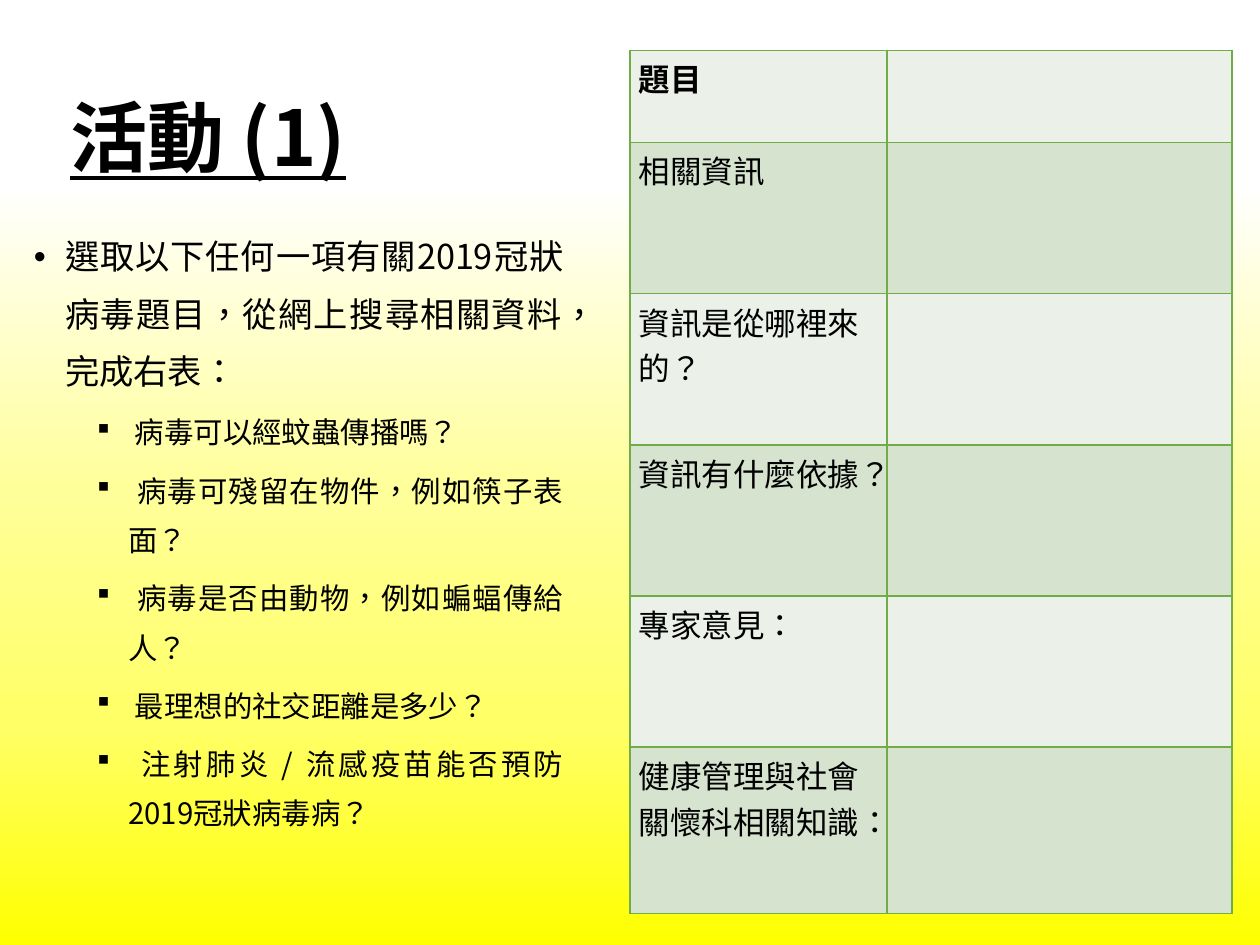
from lxml import etree
from pptx import Presentation
from pptx.enum import text
from pptx.oxml import parse_xml
from pptx.oxml.ns import nsdecls, qn
from pptx.util import Inches, Pt

FONT = "Noto Sans CJK SC"
COLORS = {"text": "000000", "border": "70AD47", "light": "EBF1E9", "dark": "D5E3CF"}
BACKGROUND = [(19, "FFFFFF"), (52, "FFFF99"), (77, "FFFF66"), (100, "FFFF00")]

INTRO = "選取以下任何一項有關2019冠狀病毒題目，從網上搜尋相關資料，完成右表："
TOPICS = [
    "病毒可以經蚊蟲傳播嗎？",
    "病毒可殘留在物件，例如筷子表面？",
    "病毒是否由動物，例如蝙蝠傳給人？",
    "最理想的社交距離是多少？",
    "注射肺炎 / 流感疫苗能否預防2019冠狀病毒病？",
]
ROWS = [
    ("題目", 0.73),
    ("相關資訊", 1.2),
    ("資訊是從哪裡來的？", 1.2),
    ("資訊有什麼依據？", 1.2),
    ("專家意見：", 1.2),
    ("健康管理與社會關懷科相關知識：", 1.32),
]
COLUMNS = [2.04, 2.74]


def solid_fill(color):
    return f'<a:solidFill {nsdecls("a")}><a:srgbClr val="{color}"/></a:solidFill>'


def set_background(s):
    stops = "".join(f'<a:gs pos="{pos * 1000}"><a:srgbClr val="{color}"/></a:gs>'
                    for pos, color in BACKGROUND)
    fill = s.background.fill
    fill.solid()
    bg_pr = s.element.find(".//" + qn("p:bgPr"))
    gradient = parse_xml(f'<a:gradFill {nsdecls("a")} rotWithShape="1"><a:gsLst>{stops}'
                         '</a:gsLst><a:lin ang="5400000" scaled="0"/></a:gradFill>')
    bg_pr.replace(bg_pr.find(qn("a:solidFill")), gradient)


def add_run(p, wording, size, bold=False, underline=False):
    r = p.add_run()
    r.text = wording
    r.font.size = Pt(size)
    r.font.bold = bold
    r.font.underline = underline
    r.font.name = FONT
    r_pr = r.font._element
    # Traditional Chinese centres its punctuation
    r_pr.set("lang", "zh-TW")
    r_pr.insert(0, parse_xml(solid_fill(COLORS["text"])))
    etree.SubElement(r_pr, qn("a:ea"), typeface=FONT)


def add_text_box(s, left, top, width, height, anchor):
    tf = s.shapes.add_textbox(Inches(left), Inches(top), Inches(width), Inches(height)).text_frame
    tf.word_wrap = True
    tf.vertical_anchor = anchor
    return tf


def add_title(s, left, top, width, height):
    tf = add_text_box(s, left, top, width, height, text.MSO_ANCHOR.MIDDLE)
    p = tf.paragraphs[0]
    p.line_spacing = 0.9
    add_run(p, "活動 (1)", 44, bold=True, underline=True)


def format_bullet(p, char, font, indent, before):
    p.alignment = text.PP_ALIGN.JUSTIFY
    p.line_spacing = 1.4
    p.space_before = Pt(before)
    p_pr = p._p.get_or_add_pPr()
    p_pr.set("marL", str(Inches(indent)))
    p_pr.set("indent", str(Inches(-0.25)))
    etree.SubElement(p_pr, qn("a:buFont"), typeface=font)
    etree.SubElement(p_pr, qn("a:buChar"), char=char)


def add_instructions(s, left, top, width, height):
    tf = add_text_box(s, left, top, width, height, text.MSO_ANCHOR.TOP)
    p = tf.paragraphs[0]
    format_bullet(p, "•", "Arial", 0.25, 10)
    add_run(p, INTRO, 19.6)
    for topic in TOPICS:
        p = tf.add_paragraph()
        p.level = 1
        format_bullet(p, "§", "Wingdings", 0.75, 5)
        add_run(p, " " + topic, 16.8)


def format_cell(cell, color):
    cell.margin_left = cell.margin_right = Inches(0.07)
    cell.margin_top = cell.margin_bottom = Inches(0.04)
    tc_pr = cell._tc.get_or_add_tcPr()
    for side in ("lnL", "lnR", "lnT", "lnB"):
        line = etree.SubElement(tc_pr, qn("a:" + side), w=str(Pt(1)))
        line.append(parse_xml(solid_fill(COLORS["border"])))
    tc_pr.append(parse_xml(solid_fill(color)))


def add_worksheet(s, left, top, width, height):
    table = s.shapes.add_table(len(ROWS), len(COLUMNS), Inches(left), Inches(top),
                               Inches(width), Inches(height)).table
    for column, column_width in zip(table.columns, COLUMNS):
        column.width = Inches(column_width)
    for i, (label, row_height) in enumerate(ROWS):
        row = table.rows[i]
        row.height = Inches(row_height)
        for cell in row.cells:
            format_cell(cell, COLORS["dark" if i % 2 else "light"])
        add_run(row.cells[0].text_frame.paragraphs[0], label, 18, bold=i == 0)


def main():
    prs = Presentation()
    prs.slide_width, prs.slide_height = Inches(10), Inches(7.5)
    s = prs.slides.add_slide(prs.slide_layouts[6])
    set_background(s)
    add_title(s, 0.46, 0.4, 8.62, 1.45)
    add_instructions(s, 0.17, 1.69, 4.4, 5.34)
    add_worksheet(s, 5, 0.4, sum(COLUMNS), sum(h for _, h in ROWS))
    prs.save("out.pptx")


if __name__ == "__main__":
    main()
